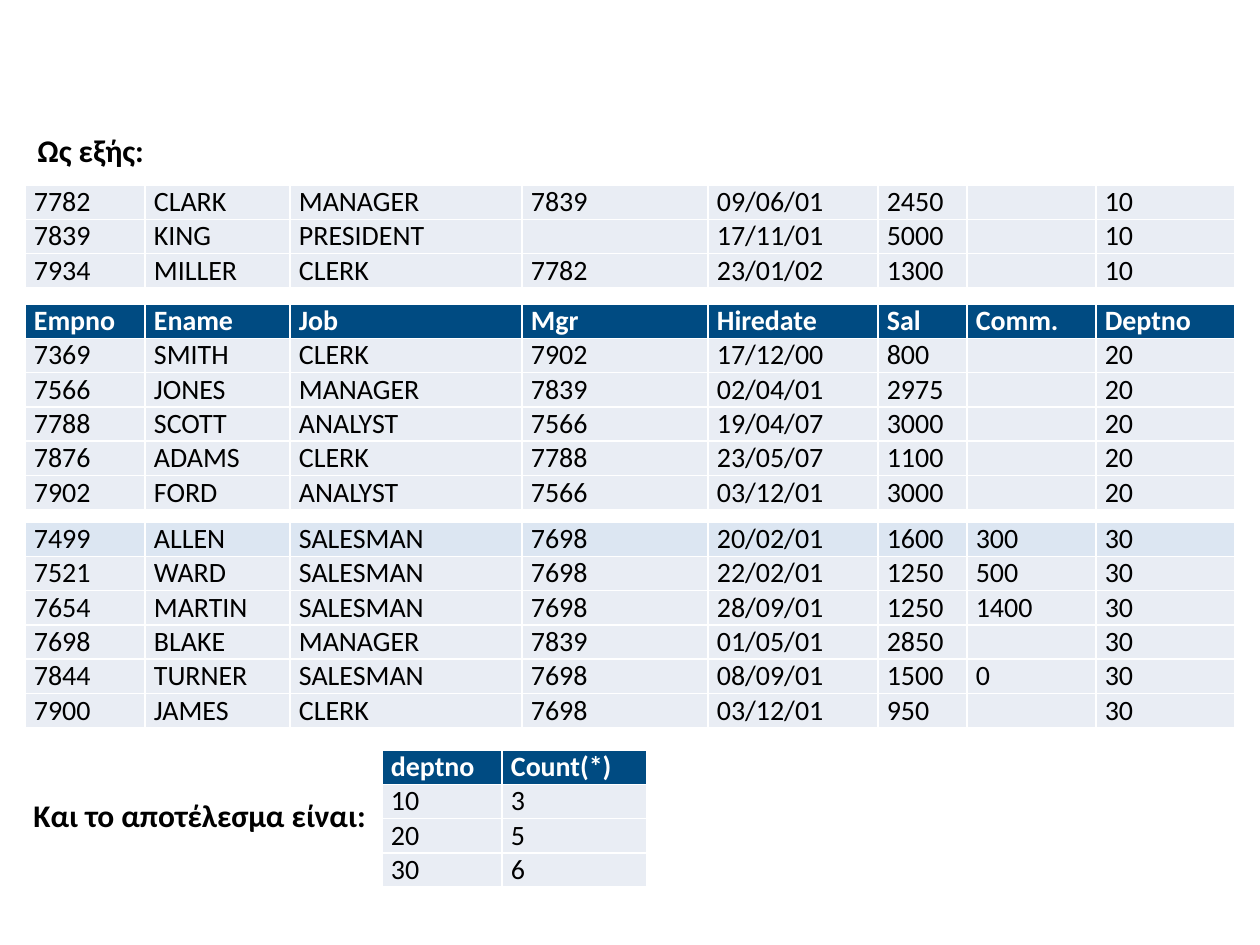
from dataclasses import dataclass

from lxml.etree import SubElement
from pptx import Presentation
from pptx.dml.color import RGBColor
from pptx.enum.text import MSO_AUTO_SIZE
from pptx.oxml.ns import qn
from pptx.util import Emu, Pt


@dataclass(frozen=True)
class Theme:
    font: str = "Calibri"
    cell_size: int = 16
    label_size: int = 18
    ink: str = "000000"
    header_ink: str = "FFFFFF"
    header_fill: str = "004B82"
    row_fill: str = "E9EDF4"
    accent_fill: str = "DCE6F2"


def emu(px):
    return Emu(round(px * 914400 / 126))


class SlideBuilder:
    """Draws labels and tables on one slide in a shared theme."""

    def __init__(self, slide, theme):
        self.slide = slide
        self.theme = theme

    def style(self, para, size, color, bold):
        font = para.font
        font.name = self.theme.font
        font.size = Pt(size)
        font.bold = bold
        font.color.rgb = RGBColor.from_string(color)

    def label(self, text, left, top, width, height):
        box = self.slide.shapes.add_textbox(*map(emu, (left, top, width, height)))
        frame = box.text_frame
        frame.word_wrap = False
        frame.auto_size = MSO_AUTO_SIZE.SHAPE_TO_FIT_TEXT
        frame.text = text
        self.style(frame.paragraphs[0], self.theme.label_size, self.theme.ink, True)

    def cell(self, cell, text, fill, header):
        cell.margin_left = cell.margin_right = emu(9)
        cell.margin_top = cell.margin_bottom = 0
        cell.fill.solid()
        cell.fill.fore_color.rgb = RGBColor.from_string(fill)
        cell.text = text
        para = cell.text_frame.paragraphs[0]
        color = self.theme.header_ink if header else self.theme.ink
        self.style(para, self.theme.cell_size, color, header)
        if not text:
            SubElement(para._p, qn("a:endParaRPr"), sz=str(self.theme.cell_size * 100))

    def table(self, rows, left, top, widths, first_fill, header=False):
        size = sum(widths), ROW_HEIGHT * len(rows)
        frame = self.slide.shapes.add_table(
            len(rows), len(widths), *map(emu, (left, top, *size))
        )
        table = frame.table
        table.first_row = header
        table.horz_banding = False
        for column, width in zip(table.columns, widths):
            column.width = emu(width)
        for index, values in enumerate(rows):
            table.rows[index].height = emu(ROW_HEIGHT)
            fill = self.theme.row_fill if index else first_fill
            for column, text in enumerate(values):
                self.cell(table.cell(index, column), text, fill, header and index == 0)


ROW_HEIGHT = 34
LEFT = 25
EMPLOYEE_WIDTHS = [120, 145, 232, 186, 170, 89, 129, 139]
COUNT_WIDTHS = EMPLOYEE_WIDTHS[:2]
HEADER = ["Empno", "Ename", "Job", "Mgr", "Hiredate", "Sal", "Comm.", "Deptno"]
EMPLOYEES = {
    "10": [
        ["7782", "CLARK", "MANAGER", "7839", "09/06/01", "2450", ""],
        ["7839", "KING", "PRESIDENT", "", "17/11/01", "5000", ""],
        ["7934", "MILLER", "CLERK", "7782", "23/01/02", "1300", ""],
    ],
    "20": [
        ["7369", "SMITH", "CLERK", "7902", "17/12/00", "800", ""],
        ["7566", "JONES", "MANAGER", "7839", "02/04/01", "2975", ""],
        ["7788", "SCOTT", "ANALYST", "7566", "19/04/07", "3000", ""],
        ["7876", "ADAMS", "CLERK", "7788", "23/05/07", "1100", ""],
        ["7902", "FORD", "ANALYST", "7566", "03/12/01", "3000", ""],
    ],
    "30": [
        ["7499", "ALLEN", "SALESMAN", "7698", "20/02/01", "1600", "300"],
        ["7521", "WARD", "SALESMAN", "7698", "22/02/01", "1250", "500"],
        ["7654", "MARTIN", "SALESMAN", "7698", "28/09/01", "1250", "1400"],
        ["7698", "BLAKE", "MANAGER", "7839", "01/05/01", "2850", ""],
        ["7844", "TURNER", "SALESMAN", "7698", "08/09/01", "1500", "0"],
        ["7900", "JAMES", "CLERK", "7698", "03/12/01", "950", ""],
    ],
}


def main():
    deck = Presentation()
    deck.slide_width, deck.slide_height = emu(1260), emu(945)
    theme = Theme()
    page = SlideBuilder(deck.slides.add_slide(deck.slide_layouts[6]), theme)

    groups = {
        department: [[*employee, department] for employee in employees]
        for department, employees in EMPLOYEES.items()
    }
    counts = [[department, str(len(rows))] for department, rows in groups.items()]

    page.table([HEADER, *groups["20"]], LEFT, 304, EMPLOYEE_WIDTHS, theme.header_fill, True)
    page.table(groups["30"], LEFT, 522, EMPLOYEE_WIDTHS, theme.accent_fill)
    page.table(
        [["deptno", "Count(*)"], *counts], 382, 750, COUNT_WIDTHS, theme.header_fill, True
    )
    page.table(groups["10"], LEFT, 185, EMPLOYEE_WIDTHS, theme.row_fill)
    page.label("Ως εξής:", LEFT, 125, 134, 51)
    page.label("Και το αποτέλεσμα είναι:", 21, 790, 362, 51)
    deck.save("out.pptx")


if __name__ == "__main__":
    main()
